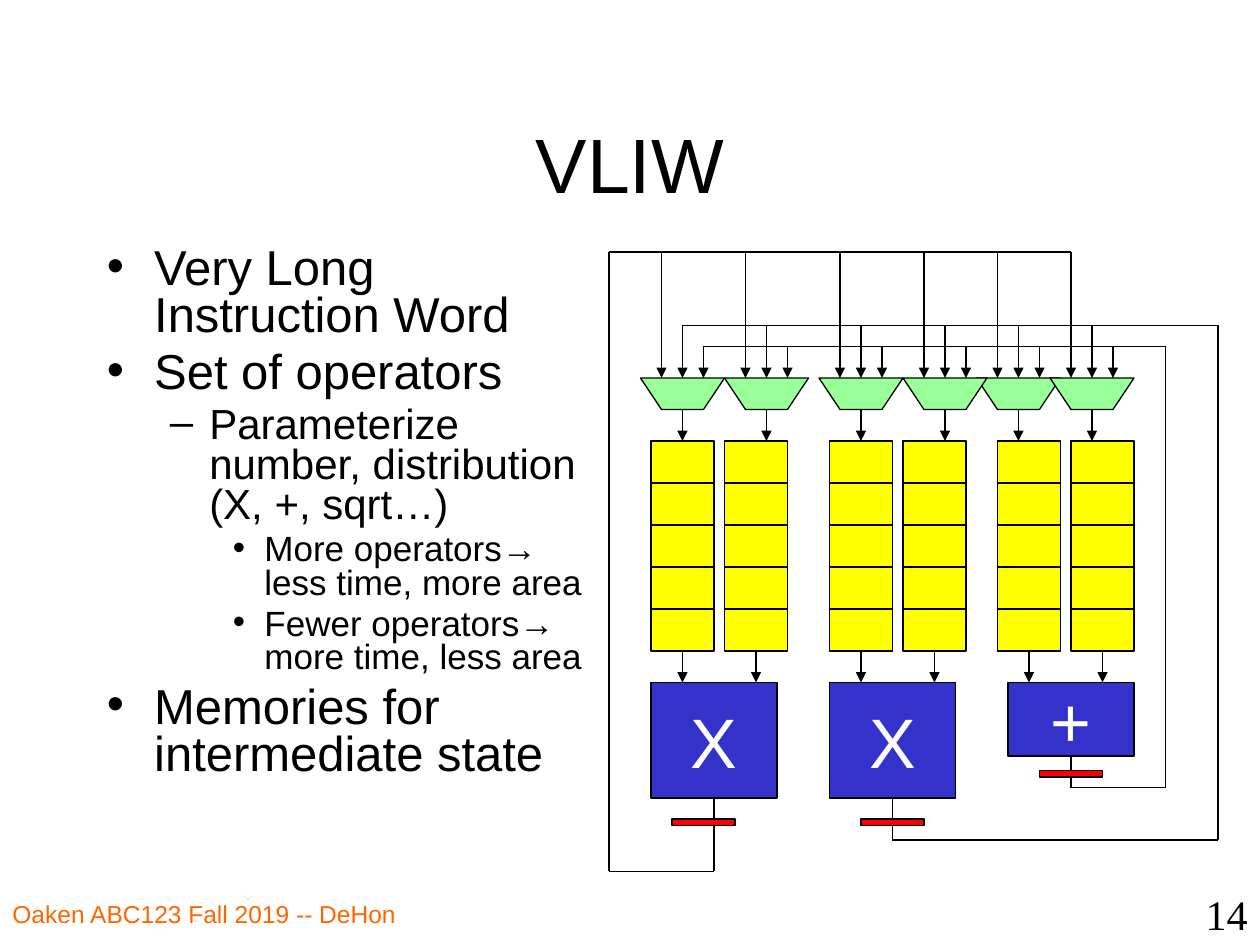
from dataclasses import dataclass
from itertools import pairwise

from pptx import Presentation
from pptx.dml.color import RGBColor
from pptx.enum.shapes import MSO_CONNECTOR, MSO_SHAPE
from pptx.enum.text import MSO_ANCHOR, PP_ALIGN
from pptx.oxml.ns import qn
from pptx.util import Pt
from lxml import etree

PX = 9525  # EMU per px, 96 px to the inch
BLACK = RGBColor(0x00, 0x00, 0x00)
WHITE = RGBColor(0xFF, 0xFF, 0xFF)
ORANGE = RGBColor(0xFF, 0x66, 0x00)
BLUE = RGBColor(0x33, 0x33, 0xCC)
YELLOW = RGBColor(0xFF, 0xFF, 0x00)
GREEN = RGBColor(0x99, 0xFF, 0x99)
RED = RGBColor(0xFF, 0x00, 0x00)
RECT = MSO_SHAPE.RECTANGLE
STRAIGHT = MSO_CONNECTOR.STRAIGHT
LEFT, CENTER, RIGHT = PP_ALIGN.LEFT, PP_ALIGN.CENTER, PP_ALIGN.RIGHT
TOP, MIDDLE = MSO_ANCHOR.TOP, MSO_ANCHOR.MIDDLE

# Vertical levels of the datapath
RAILS = (192, 248, 264)
MUX_Y, MUX_H = 288, 24
MEM_Y, MEM_W, CELL_H, CELLS = 336, 48, 32, 5
MEM_END = MEM_Y + CELLS * CELL_H
ALU_Y, ALU_W = 520, 96
REG_W, REG_H = 48, 5


@dataclass(frozen=True)
class Unit:
    label: str
    alu_x: int
    alu_h: int
    mem_x: tuple[int, int]
    mux_x: tuple[int, int]
    reg: tuple[int, int]
    feedback: tuple[tuple[int, int], ...]


@dataclass(frozen=True)
class Bullet:
    text: str
    level: int = 0


@dataclass(frozen=True)
class Level:
    size: int
    mark: str
    margin: int
    hang: int


UNITS = (
    Unit("+", 768, 56, (760, 816), (744, 800), (792, 587),
         ((816, 576), (816, 600), (888, 600), (888, RAILS[2]), (536, RAILS[2]))),
    Unit("X", 632, 88, (632, 688), (624, 688), (656, 624),
         ((680, 608), (680, 640), (928, 640), (928, RAILS[1]), (520, RAILS[1]))),
    Unit("X", 496, 88, (496, 552), (488, 552), (512, 624),
         ((544, 608), (544, 664), (464, 664), (464, RAILS[0]), (816, RAILS[0]))),
)
LEVELS = (Level(28, "•", 36, 36), Level(24, "–", 78, 30), Level(20, "•", 120, 24))
BULLETS = (
    Bullet("Very Long Instruction Word"),
    Bullet("Set of operators"),
    Bullet("Parameterize number, distribution (X, +, sqrt…)", 1),
    Bullet("More operators→ less time, more area", 2),
    Bullet("Fewer operators→ more time, less area", 2),
    Bullet("Memories for intermediate state"),
)


def set_font(p, size: int, color: RGBColor, name: str = "Arial") -> None:
    p.font.size = Pt(size)
    p.font.name = name
    p.font.color.rgb = color


def add_text(slide, x: int, y: int, w: int, h: int, text: str, size: int,
             color: RGBColor = BLACK, align=LEFT, anchor=TOP, name: str = "Arial") -> None:
    tf = slide.shapes.add_textbox(x * PX, y * PX, w * PX, h * PX).text_frame
    tf.word_wrap = True
    tf.vertical_anchor = anchor
    p = tf.paragraphs[0]
    p.text = text
    p.alignment = align
    set_font(p, size, color, name)


def add_bullets(slide, x: int, y: int, w: int, h: int) -> None:
    tf = slide.shapes.add_textbox(x * PX, y * PX, w * PX, h * PX).text_frame
    tf.word_wrap = True
    for i, bullet in enumerate(BULLETS):
        level = LEVELS[bullet.level]
        p = tf.add_paragraph() if i else tf.paragraphs[0]
        p.text = bullet.text
        p.level = bullet.level
        p.line_spacing = 0.8
        p.space_before = Pt(level.size * 0.2)
        set_font(p, level.size, BLACK)
        pPr = p._p.get_or_add_pPr()
        pPr.set("marL", str(level.margin * PX))
        pPr.set("indent", str(-level.hang * PX))
        run_defaults = pPr.find(qn("a:defRPr"))
        for tag, attrs in (("a:buFont", {"typeface": "Arial"}), ("a:buChar", {"char": level.mark})):
            run_defaults.addprevious(pPr.makeelement(qn(tag), attrs))


def style(sp, fill: RGBColor) -> None:
    sp.shadow.inherit = False
    sp.fill.solid()
    sp.fill.fore_color.rgb = fill
    sp.line.color.rgb = BLACK
    sp.line.width = Pt(0.75)


def add_box(slide, x: int, y: int, w: int, h: int, fill: RGBColor, label: str = "") -> None:
    sp = slide.shapes.add_shape(RECT, x * PX, y * PX, w * PX, h * PX)
    style(sp, fill)
    if label:
        tf = sp.text_frame
        tf.word_wrap = False
        tf.vertical_anchor = MIDDLE
        p = tf.paragraphs[0]
        p.text = label
        p.alignment = CENTER
        set_font(p, 40, WHITE)


def add_wire(slide, start: tuple[int, int], end: tuple[int, int], arrow: bool = False) -> None:
    cxn = slide.shapes.add_connector(STRAIGHT, *(v * PX for v in start + end))
    cxn.line.color.rgb = BLACK
    cxn.line.width = Pt(0.75)
    if arrow:
        etree.SubElement(cxn.line._get_or_add_ln(), qn("a:tailEnd"), type="triangle")
    etree.SubElement(cxn._element.spPr, qn("a:effectLst"))


def add_mux(slide, x: int) -> None:
    fb = slide.shapes.build_freeform(x, MUX_Y, scale=PX)
    bottom = MUX_Y + MUX_H
    fb.add_line_segments([(x + 16, bottom), (x + 48, bottom), (x + 64, MUX_Y)])
    style(fb.convert_to_shape(), GREEN)
    add_wire(slide, (x + 32, bottom), (x + 32, MEM_Y), arrow=True)
    for i, rail in enumerate(RAILS, 1):
        add_wire(slide, (x + 16 * i, rail), (x + 16 * i, MUX_Y), arrow=True)


def add_memory(slide, x: int) -> None:
    for i in range(CELLS):
        add_box(slide, x, MEM_Y + i * CELL_H, MEM_W, CELL_H, YELLOW)
    mid = x + MEM_W // 2
    add_wire(slide, (mid, MEM_END), (mid, ALU_Y), arrow=True)


def add_unit(slide, unit: Unit) -> None:
    add_box(slide, unit.alu_x, ALU_Y, ALU_W, unit.alu_h, BLUE, unit.label)
    for x in unit.mem_x:
        add_memory(slide, x)
    for x in unit.mux_x:
        add_mux(slide, x)
    for start, end in pairwise(unit.feedback):
        add_wire(slide, start, end)
    add_box(slide, *unit.reg, REG_W, REG_H, RED)


def main() -> None:
    prs = Presentation()
    prs.slide_width, prs.slide_height = 960 * PX, 720 * PX
    slide = prs.slides.add_slide(prs.slide_layouts[6])

    # Title, bullets and footer
    add_text(slide, 72, 64, 816, 120, "VLIW", 44, align=CENTER, anchor=MIDDLE)
    add_bullets(slide, 72, 184, 400, 432)
    add_text(slide, 0, 680, 368, 40, "Oaken ABC123 Fall 2019 -- DeHon", 14, ORANGE)
    add_text(slide, 760, 672, 200, 48, "14", 24, align=RIGHT, name="Times New Roman")

    # Datapath
    for unit in UNITS:
        add_unit(slide, unit)

    prs.save("out.pptx")


if __name__ == "__main__":
    main()
